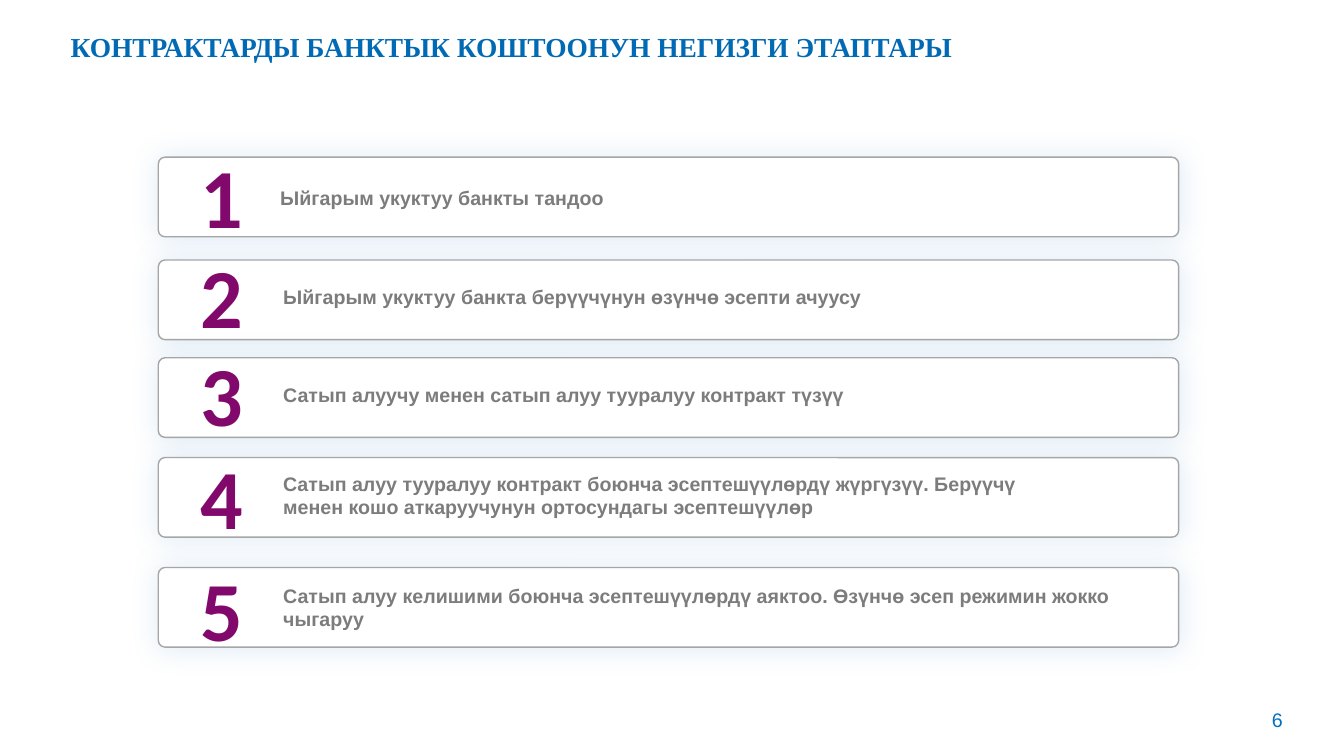
from lxml.etree import SubElement
from pptx import Presentation
from pptx.dml.color import RGBColor
from pptx.enum.shapes import MSO_SHAPE
from pptx.enum.text import MSO_AUTO_SIZE, PP_ALIGN
from pptx.oxml.ns import qn
from pptx.util import Inches, Pt

COLORS = {
    "title": "006AB4",
    "card": "FFFFFF",
    "border": "A6A6A6",
    "glow": "5B9BD5",
    "number": "82096C",
    "label": "7C7C7C",
    "page": "0070C0",
}

prs = Presentation()
prs.slide_width, prs.slide_height = Inches(13.33), Inches(7.5)
s = prs.slides.add_slide(prs.slide_layouts[6])


def place(x, y, w, h):
    W, H = prs.slide_width, prs.slide_height
    return [int(size * share / 100) for size, share in ((W, x), (H, y), (W, w), (H, h))]


def add_text(shapes, area, text, size, font, color, bold=True):
    tf = shapes.add_textbox(*place(*area)).text_frame
    tf.word_wrap = True
    tf.text = text
    f = tf.paragraphs[0].runs[0].font
    f.size, f.name, f.bold = Pt(size), font, bold
    f.color.rgb = RGBColor.from_string(COLORS[color])
    return tf


tf = add_text(s.shapes, (5.25, 4.53, 87.55, 5.87),
              "КОНТРАКТАРДЫ БАНКТЫК КОШТООНУН НЕГИЗГИ ЭТАПТАРЫ",
              19.6, "Times New Roman", "title")
tf.margin_left = tf.margin_top = 0
tf.paragraphs[0].line_spacing = 0.9

stages = [
    (20.8, 18.4, (20.11, 23.87, 53.64, 4.53), "Ыйгарым укуктуу банкты тандоо"),
    (34.4, 31.73, (20.33, 37.07, 58.89, 4.53),
     "Ыйгарым укуктуу банкта берүүчүнун өзүнчө эсепти ачуусу"),
    (47.33, 44.67, (20.33, 50, 58.89, 4.53),
     "Сатып алуучу менен сатып алуу тууралуу контракт түзүү"),
    (60.53, 58.27, (20.33, 61.73, 60.92, 7.6),
     "Сатып алуу тууралуу контракт боюнча эсептешүүлөрдү жүргүзүү. "
     "Берүүчү менен кошо аткаруучунун ортосундагы эсептешүүлөр"),
    (75.07, 73.07, (20.33, 76.53, 64.52, 7.6),
     "Сатып алуу келишими боюнча эсептешүүлөрдү аяктоо. "
     "Өзүнчө эсеп режимин жокко чыгаруу"),
]

for n, (card_top, number_top, label_area, label) in enumerate(stages, 1):
    grp = s.shapes.add_group_shape()
    sp = grp.shapes.add_shape(MSO_SHAPE.ROUNDED_RECTANGLE,
                              *place(11.78, card_top, 75.92, 10.53))
    sp.adjustments[0] = 0.084
    sp.fill.solid()
    sp.fill.fore_color.rgb = RGBColor.from_string(COLORS["card"])
    sp.line.color.rgb = RGBColor.from_string(COLORS["border"])
    sp.line.width = Pt(1)
    sp.shadow.inherit = False
    effects = sp._element.spPr.find(qn("a:effectLst"))
    glow = SubElement(effects, qn("a:outerShdw"), blurRad=str(Pt(20)), dist="0",
                      dir="0", algn="ctr", rotWithShape="0")
    clr = SubElement(glow, qn("a:srgbClr"), val=COLORS["glow"])
    SubElement(clr, qn("a:alpha"), val="20000")

    tf = add_text(grp.shapes, (14.18, number_top, 6.3, 14.8), str(n), 60, "Calibri", "number")
    tf.word_wrap = False
    tf.auto_size = MSO_AUTO_SIZE.SHAPE_TO_FIT_TEXT
    tf = add_text(grp.shapes, label_area, label, 14, "Arial", "label")
    tf.auto_size = MSO_AUTO_SIZE.SHAPE_TO_FIT_TEXT

tf = add_text(s.shapes, (92.8, 93.6, 4.5, 6.4), "6", 14, "Arial", "page", False)
tf.margin_left = tf.margin_right = tf.margin_top = tf.margin_bottom = 0
tf.paragraphs[0].alignment = PP_ALIGN.CENTER

prs.save("out.pptx")
